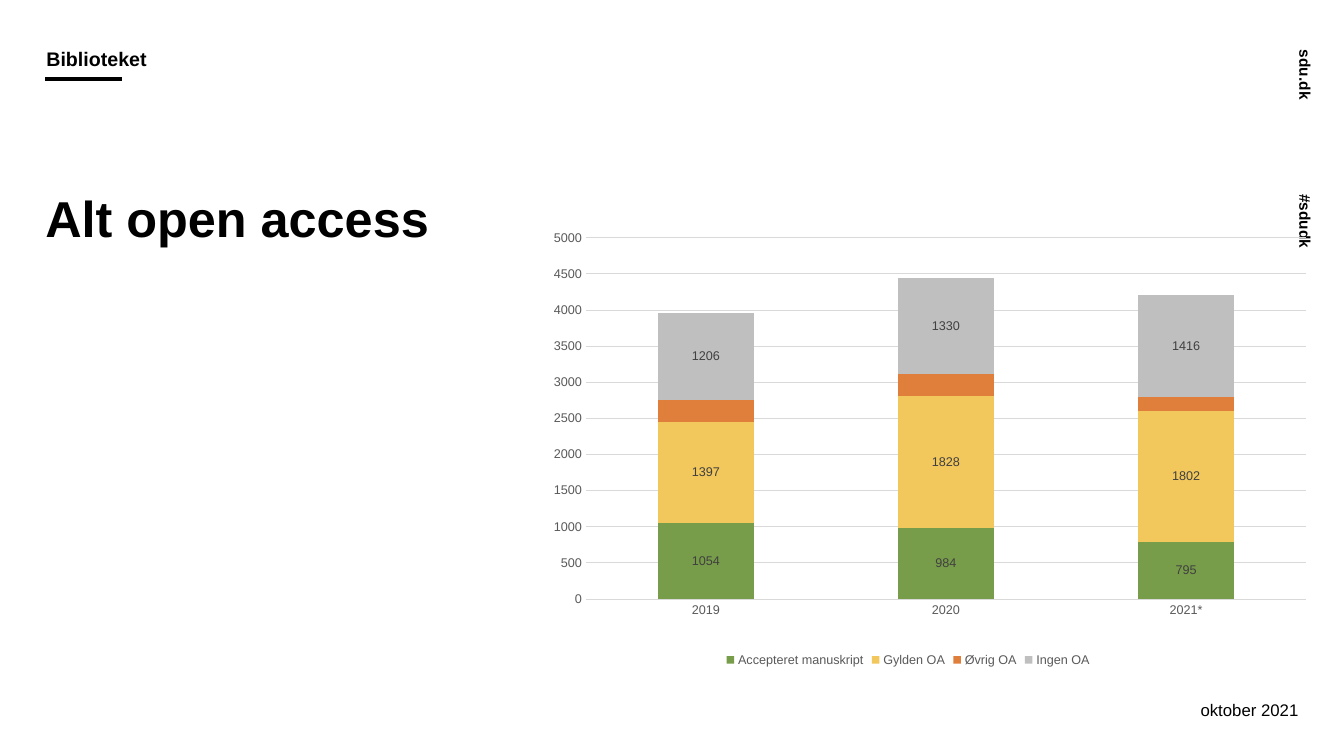
"""Build the open access slide with a stacked column chart of publications per year."""
from lxml.etree import SubElement
from pptx import Presentation
from pptx.chart.data import CategoryChartData
from pptx.dml.color import RGBColor
from pptx.enum.chart import XL_CHART_TYPE as ChartType, XL_LEGEND_POSITION as LegendSpot
from pptx.enum.chart import XL_TICK_MARK as TickMark
from pptx.enum.shapes import MSO_CONNECTOR as Connector
from pptx.enum.text import MSO_ANCHOR as Anchor, MSO_AUTO_SIZE as AutoSize, PP_ALIGN as Align
from pptx.oxml import parse_xml
from pptx.oxml.ns import nsdecls, qn
from pptx.util import Pt

EMU_PER_PX = 9144
COLORS = {
    "ink": "000000", "axis": "595959", "label": "404040", "grid": "D9D9D9",
    "green": "789D4A", "gold": "F2C75C", "orange": "E07E3C", "grey": "BFBFBF",
}
YEARS = ["2019", "2020", "2021*"]
SERIES = [
    ("Accepteret manuskript", [1054, 984, 795], "green", True),
    ("Gylden OA", [1397, 1828, 1802], "gold", True),
    ("Øvrig OA", [300, 300, 200], "orange", False),
    ("Ingen OA", [1206, 1330, 1416], "grey", True),
]
PLOT_LAYOUT = {"x": 0.095, "y": 0.117, "w": 0.905, "h": 0.736}


def px(length):
    return length * EMU_PER_PX


class SlideBuilder:
    def __init__(self, page, font="Arial"):
        self.page = page
        self.font = font

    def color(self, name):
        return RGBColor.from_string(COLORS[name])

    def style_font(self, font, size, color="ink", bold=False):
        font.name = self.font
        font.size = Pt(size)
        font.bold = bold
        font.color.rgb = self.color(color)

    def style_line(self, line, color, width):
        line.color.rgb = self.color(color)
        line.width = Pt(width)

    def text(self, text, left, top, width, height, *, size, bold=True, align=Align.LEFT,
             anchor=Anchor.TOP, rotation=0, insets=(0, 0, 0, 0), spacing=None, grow=False):
        box = self.page.shapes.add_textbox(px(left), px(top), px(width), px(height))
        box.rotation = rotation
        frame = box.text_frame
        frame.word_wrap = True
        frame.auto_size = AutoSize.SHAPE_TO_FIT_TEXT if grow else AutoSize.NONE
        frame.vertical_anchor = anchor
        (frame.margin_left, frame.margin_top,
         frame.margin_right, frame.margin_bottom) = map(px, insets)
        para = frame.paragraphs[0]
        para.alignment = align
        para.line_spacing = spacing
        span = para.add_run()
        span.text = text
        self.style_font(span.font, size, bold=bold)

    def rule(self, left, top, right, width):
        line = self.page.shapes.add_connector(
            Connector.STRAIGHT, px(left), px(top), px(right), px(top))
        self.style_line(line.line, "ink", width)
        SubElement(line._element.spPr, qn("a:effectLst"))

    def stacked_columns(self, left, top, width, height):
        data = CategoryChartData()
        data.categories = YEARS
        for name, values, _, _ in SERIES:
            data.add_series(name, values)
        chart = self.page.shapes.add_chart(
            ChartType.COLUMN_STACKED, px(left), px(top), px(width), px(height), data).chart
        chart.has_title = False
        self.style_font(chart.font, 10)
        self.style_plot(chart)
        self.style_axes(chart)
        chart.has_legend = True
        chart.legend.position = LegendSpot.BOTTOM
        chart.legend.include_in_layout = False
        self.style_font(chart.legend.font, 9, "axis")

    def style_plot(self, chart):
        plot = chart.plots[0]
        plot.gap_width = 150
        plot.overlap = 100
        plot.vary_by_categories = False
        for series, (_, _, color, labelled) in zip(plot.series, SERIES):
            series.format.fill.solid()
            series.format.fill.fore_color.rgb = self.color(color)
            if labelled:
                series.data_labels.show_value = True
                self.style_font(series.data_labels.font, 9, "label")
        area = chart._chartSpace.chart.plotArea
        for old_layout in area.findall(qn("c:layout")):
            area.remove(old_layout)
        modes = '<c:xMode val="edge"/><c:yMode val="edge"/>'
        sizes = "".join(f'<c:{key} val="{value}"/>' for key, value in PLOT_LAYOUT.items())
        area.insert(0, parse_xml(
            f'<c:layout {nsdecls("c")}><c:manualLayout><c:layoutTarget val="inner"/>'
            f'{modes}{sizes}</c:manualLayout></c:layout>'))

    def style_axes(self, chart):
        for axis in (chart.category_axis, chart.value_axis):
            axis.major_tick_mark = axis.minor_tick_mark = TickMark.NONE
            self.style_font(axis.tick_labels.font, 9, "axis")
        self.style_line(chart.category_axis.format.line, "grid", 0.75)
        values = chart.value_axis
        values.minimum_scale, values.maximum_scale, values.major_unit = 0, 5000, 500
        values.format.line.fill.background()
        values.has_major_gridlines = True
        self.style_line(values.major_gridlines.format.line, "grid", 0.75)


def main():
    deck = Presentation()
    deck.slide_width, deck.slide_height = px(1333), px(750)
    builder = SlideBuilder(deck.slides.add_slide(deck.slide_layouts[6]))
    for tag, top in (("sdu.dk", 79), ("#sdudk", 222)):
        builder.text(tag, 1256, top, 100, 41, size=11, anchor=Anchor.BOTTOM, rotation=90)
    builder.rule(45, 78, 121, width=3)
    builder.text("oktober 2021", 1001, 694, 287, 20, size=12, bold=False, align=Align.RIGHT)
    builder.text("Biblioteket", 45, 49, 622, 31, size=14, anchor=Anchor.BOTTOM,
                 insets=(1, 0, 0, 10), spacing=0.9, grow=True)
    builder.text("Alt open access", 45, 186, 587, 453, size=36)
    builder.stacked_columns(506, 179, 790, 487)
    deck.save("out.pptx")


if __name__ == "__main__":
    main()
